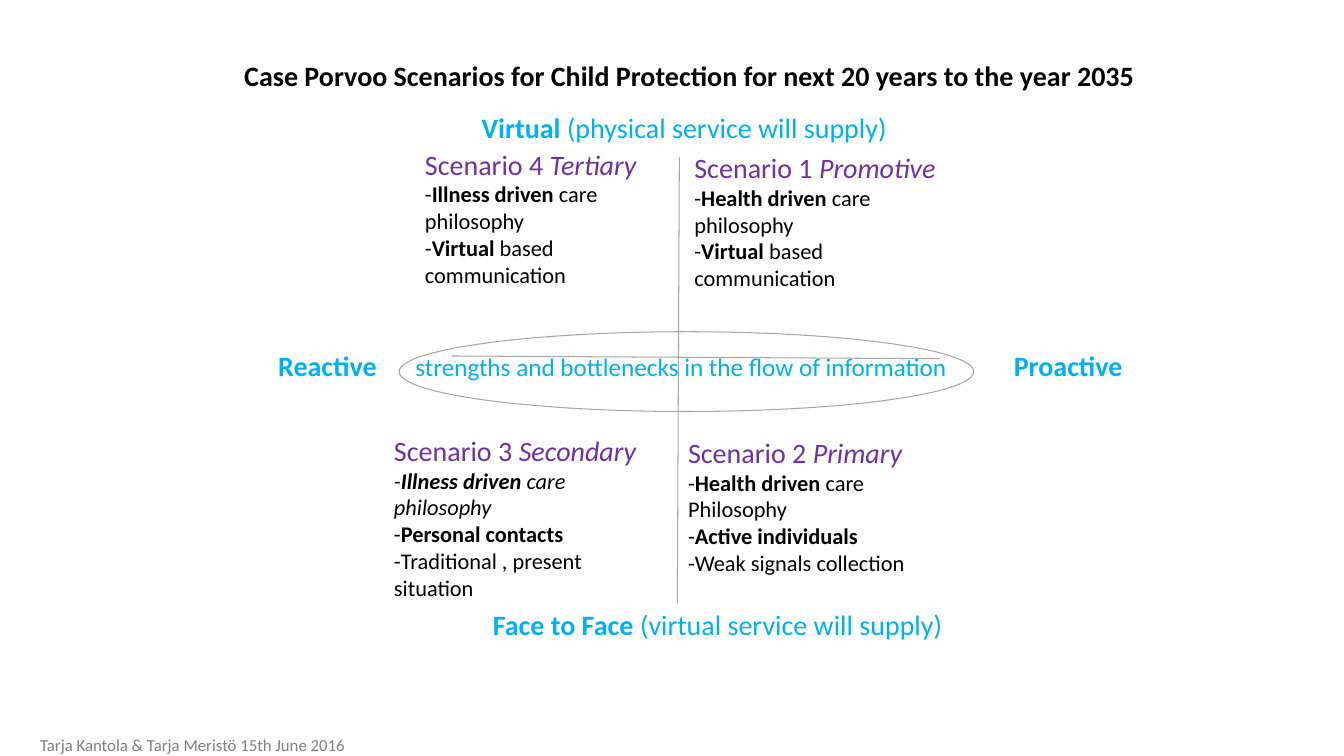
"""Build the slide with four child protection scenarios around two axes."""
from dataclasses import dataclass

import pptx
import pptx.dml.color
import pptx.enum.shapes
import pptx.enum.text
import pptx.oxml.ns
import pptx.util
from lxml import etree
from pptx.util import Cm


@dataclass(frozen=True)
class Theme:
    """Hold the font, colours and type sizes."""
    font: str = "Calibri"
    black: str = "000000"
    blue: str = "00B0F0"
    violet: str = "7030A0"
    grey: str = "808080"
    rule: str = "A6A6A6"
    head: int = 20
    mid: int = 18
    body: int = 16
    small: int = 12
    line: float = 0.75


THEME = Theme()
FLAGS = {"b": "bold", "i": "italic"}
SCENES = [
    (17.25, 3.66, 6.86, True, ("Scenario 1 ", "Promotive"), [
        [("-", ""), ("Health driven ", "b"), ("care", "")],
        [("philosophy", "")],
        [("-", ""), ("Virtual ", "b"), ("based", "")],
        [("communication", "")]]),
    (17.09, 10.84, 6.12, False, ("Scenario 2 ", "Primary"), [
        [("-", ""), ("Health driven ", "b"), ("care", "")],
        [("Philosophy", "")],
        [("-", ""), ("Active individuals", "b")],
        [("-Weak signals collection", "")]]),
    (10.46, 3.58, 6.86, True, ("Scenario 4 ", "Tertiary"), [
        [("-", ""), ("Illness driven ", "b"), ("care philosophy", "")],
        [("-", ""), ("Virtual ", "b"), ("based communication", "")]]),
    (9.68, 10.79, 7.32, True, ("Scenario 3 ", "Secondary"), [
        [("-", "i"), ("Illness driven ", "bi"), ("care philosophy", "i")],
        [("-", ""), ("Personal contacts", "b")],
        [("-Traditional , present situation", "")]]),
]
LABELS = [
    (11.89, 2.67, 14.78, [("Virtual ", "b"), ("(physical service will supply)", "")]),
    (12.17, 15.19, 12.37, [("Face to Face ", "b"), ("(virtual service will supply)", "")]),
    (6.76, 8.66, 3.23, [("Reactive", "b")]),
    (25.3, 8.66, 4.88, [("Proactive", "b")]),
]
AXES = [(17.12, 3.96, 17.07, 15.19), (11.38, 8.97, 23.7, 9.04)]


def paint(target, ink):
    """Set a colour from its hex value."""
    target.rgb = pptx.dml.color.RGBColor.from_string(ink)


def write(para, runs, size, ink):
    """Fill a paragraph with runs of one size and colour."""
    for text, marks in runs:
        run = para.add_run()
        run.text = text
        form = {"name": THEME.font, "size": pptx.util.Pt(size)}
        form.update({name: key in marks for key, name in FLAGS.items()})
        for name, value in form.items():
            setattr(run.font, name, value)
        paint(run.font.color, ink)


def frame(shape, wrap=True):
    """Set how a shape holds its text and return its text frame."""
    form = {"word_wrap": wrap,
            "auto_size": pptx.enum.text.MSO_AUTO_SIZE.NONE,
            "vertical_anchor": pptx.enum.text.MSO_ANCHOR.TOP}
    for name, value in form.items():
        setattr(shape.text_frame, name, value)
    return shape.text_frame


def add_text(slide, left, top, width, height, lines, wrap=True):
    """Add a text box whose lines are (runs, size, ink)."""
    box = slide.shapes.add_textbox(Cm(left), Cm(top), Cm(width), Cm(height))
    text = frame(box, wrap)
    for index, line in enumerate(lines):
        para = text.add_paragraph() if index else text.paragraphs[0]
        write(para, *line)


def add_title(slide, text):
    """Place and format the title."""
    title = slide.shapes.title
    form = {"left": Cm(5.9), "top": Cm(1.35), "width": Cm(25), "height": Cm(1.12)}
    for name, value in form.items():
        setattr(title, name, value)
    para = frame(title).paragraphs[0]
    para.alignment = pptx.enum.text.PP_ALIGN.LEFT
    write(para, [(text, "b")], THEME.head, THEME.black)


def add_scene(slide, left, top, width, wrap, names, points):
    """Add a scenario heading with its points."""
    head = list(zip(names, ("", "i")))
    lines = [(head, THEME.head, THEME.violet)]
    lines += [(runs, THEME.body, THEME.black) for runs in points]
    add_text(slide, left, top, width, 1.2 + 0.7 * len(points), lines, wrap)


def stroke(shape):
    """Give a shape the thin grey outline."""
    paint_line = shape.line
    paint_line.width = pptx.util.Pt(THEME.line)
    paint_line.fill.solid()
    paint(paint_line.fill.fore_color, THEME.rule)


def add_axis(slide, *ends):
    """Add a straight axis line."""
    kind = pptx.enum.shapes.MSO_CONNECTOR.STRAIGHT
    axis = slide.shapes.add_connector(kind, *map(Cm, ends))
    stroke(axis)
    props = axis._element.spPr
    etree.SubElement(props, pptx.oxml.ns.qn("a:effectLst"))


def add_oval(slide, *place):
    """Add an unfilled ellipse."""
    kind = pptx.enum.shapes.MSO_SHAPE.OVAL
    oval = slide.shapes.add_shape(kind, *map(Cm, place))
    oval.shadow.inherit = False
    oval.fill.background()
    stroke(oval)


def main():
    """Build and save the slide."""
    deck = pptx.Presentation()
    deck.slide_width, deck.slide_height = Cm(33.87), Cm(19.05)
    slide = deck.slides.add_slide(deck.slide_layouts.get_by_name("Title Only"))
    add_title(slide, "Case Porvoo Scenarios for Child Protection "
                     "for next 20 years to the year 2035")
    for scene in SCENES:
        add_scene(slide, *scene)
    for left, top, width, runs in LABELS:
        add_text(slide, left, top, width, 1.12, [(runs, THEME.head, THEME.blue)])
    for ends in AXES:
        add_axis(slide, *ends)
    add_oval(slide, 10.06, 8.36, 14.48, 2.01)
    flow = [("strengths and bottlenecks in the flow of information", "")]
    add_text(slide, 10.22, 8.74, 14, 1.02, [(flow, THEME.mid, THEME.blue)], False)
    credit = [("Tarja Kantola & Tarja Meristö 15th June 2016", "")]
    add_text(slide, 0.76, 18.4, 14.4, 0.65, [(credit, THEME.small, THEME.grey)])
    deck.save("out.pptx")


if __name__ == "__main__":
    main()
